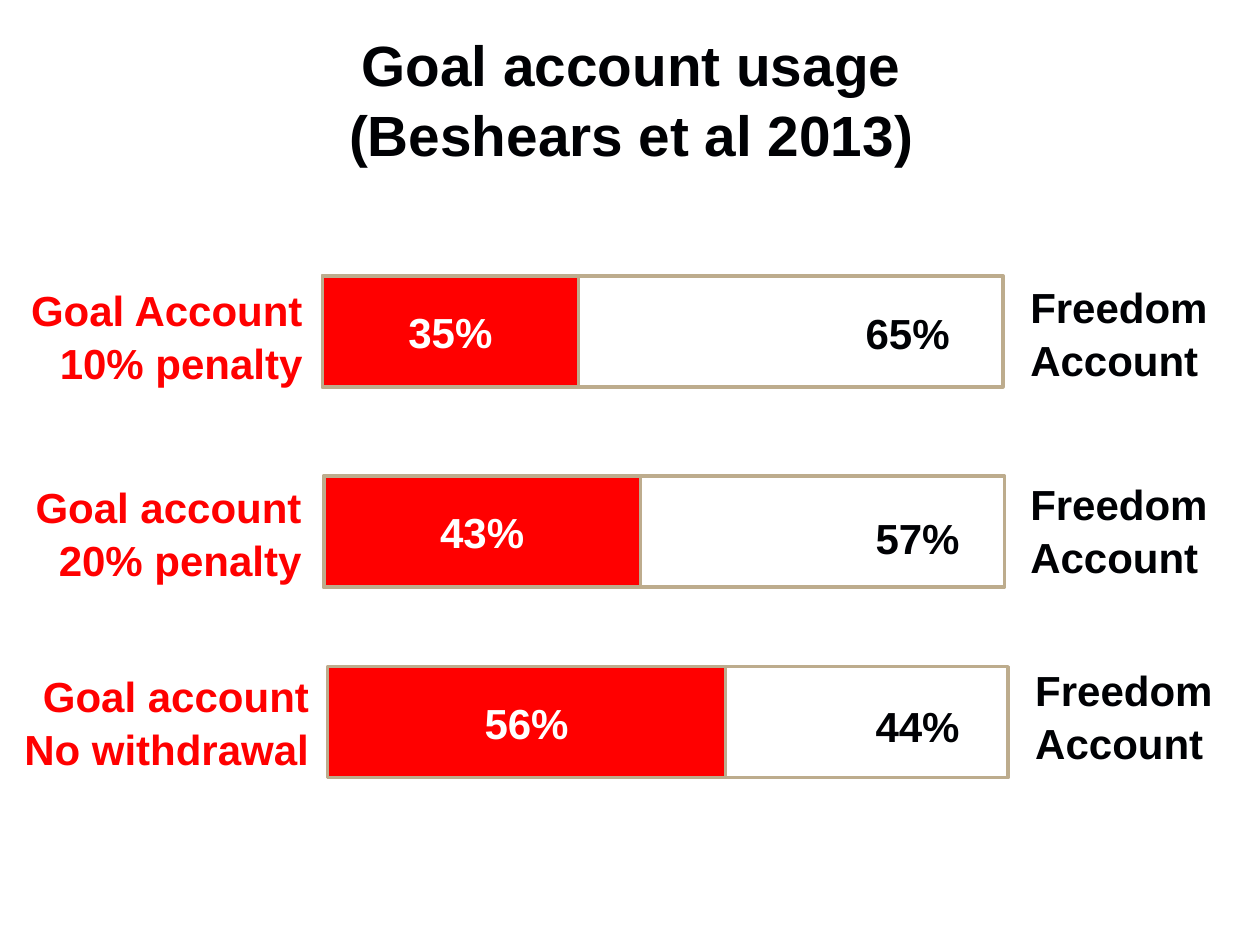
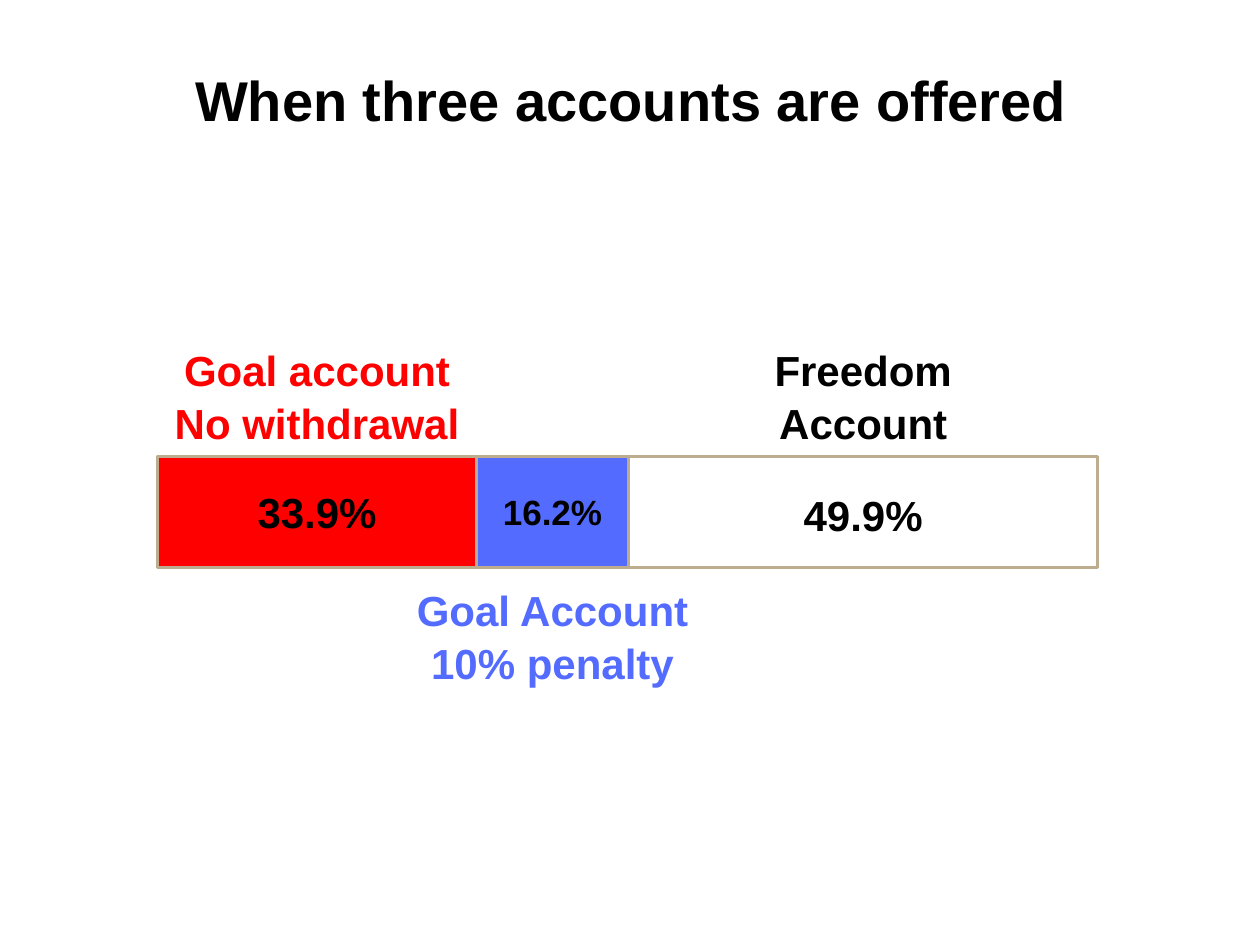
import pptx
import pptx.util
import pptx.dml.color
import pptx.enum.shapes
import pptx.enum.text
from dataclasses import dataclass

Cm = pptx.util.Cm
Pt = pptx.util.Pt
ALIGN = pptx.enum.text.PP_ALIGN
LEFT, CENTER, RIGHT = ALIGN.LEFT, ALIGN.CENTER, ALIGN.RIGHT


@dataclass(frozen=True)
class Theme:
    font: str = "Arial"
    ink: str = "000104"
    black: str = "000000"
    white: str = "FFFFFF"
    red: str = "FF0000"
    blue: str = "536BFF"
    border: str = "BDAC8D"
    border_width: float = 2
    label_size: float = 24
    small_size: float = 20
    label_spacing: float = 1.05
    title_spacing: float = 1.03


T = Theme()

# Content: lengths in centimetres
TITLE_BOX = (0.61, 0.38, 24.23, 3.18)
BAR_H, LABEL_H, VALUE_H = 2.24, 2.31, 1.27
FREEDOM = ["Freedom", "Account"]
FREEDOM_W = 4.11

USAGE_TITLE = ["Goal account usage", "(Beshears et al 2013)"]
USAGE_BAR_W = 13.72
USAGE = [
    dict(goal=["Goal Account", "10% penalty"], goal_box=(-0.53, 5.56, 6.88),
         bar=(6.5, 5.56), red_w=5.16, share="35%",
         rest="65%", rest_at=(17.2, 6.02), freedom_at=(20.52, 5.51)),
    dict(goal=["Goal account", "20% penalty"], goal_box=(0.41, 9.53, 5.92),
         bar=(6.53, 9.6), red_w=6.38, share="43%",
         rest="57%", rest_at=(17.4, 10.16), freedom_at=(20.52, 9.47)),
    dict(goal=["Goal account", "No withdrawal"], goal_box=(0.18, 13.34, 6.3),
         bar=(6.6, 13.44), red_w=8.03, share="56%",
         rest="44%", rest_at=(17.4, 13.94), freedom_at=(20.62, 13.23)),
]

OFFER_TITLE = ["When three accounts are offered"]
OFFER_BAR = (3.18, 9.2, 18.95)
ABOVE_Y, BELOW_Y, REST_Y = 6.78, 11.61, 9.7
# share, fill, text size, label, label width, label top
OFFER = [
    (33.9, T.red, T.label_size, ["Goal account", "No withdrawal"], 6.3, ABOVE_Y),
    (16.2, T.blue, T.small_size, ["Goal Account", "10% penalty"], 6.88, BELOW_Y),
]
OFFER_REST = 49.9


# Shared helpers
def rgb(value):
    return pptx.dml.color.RGBColor.from_string(value)


def add_run(p, text, color, size):
    r = p.add_run()
    r.text = text
    r.font.name, r.font.size, r.font.bold = T.font, Pt(size), True
    r.font.color.rgb = rgb(color)


def add_title(s, lines, color, size):
    sp = s.shapes.title
    sp.left, sp.top, sp.width, sp.height = map(Cm, TITLE_BOX)
    tf = sp.text_frame
    tf.auto_size = pptx.enum.text.MSO_AUTO_SIZE.NONE
    tf.vertical_anchor = pptx.enum.text.MSO_ANCHOR.MIDDLE
    p = tf.paragraphs[0]
    p.alignment, p.line_spacing = CENTER, T.title_spacing
    for i, line in enumerate(lines):
        if i:
            p.add_line_break()
        add_run(p, line, color, size)


def add_label(s, lines, x, y, w, h, color, align):
    tf = s.shapes.add_textbox(Cm(x), Cm(y), Cm(w), Cm(h)).text_frame
    tf.word_wrap = False
    for i, line in enumerate(lines):
        p = tf.add_paragraph() if i else tf.paragraphs[0]
        p.alignment, p.line_spacing = align, T.label_spacing
        add_run(p, line, color, T.label_size)


def add_bar(s, x, y, w, fill=None, text=None, color=None, size=T.label_size):
    sp = s.shapes.add_shape(pptx.enum.shapes.MSO_SHAPE.RECTANGLE,
                            Cm(x), Cm(y), Cm(w), Cm(BAR_H))
    sp.shadow.inherit = False
    sp.line.color.rgb, sp.line.width = rgb(T.border), Pt(T.border_width)
    if fill is None:
        sp.fill.background()
        return
    sp.fill.solid()
    sp.fill.fore_color.rgb = rgb(fill)
    tf = sp.text_frame
    tf.word_wrap = False
    tf.vertical_anchor = pptx.enum.text.MSO_ANCHOR.MIDDLE
    p = tf.paragraphs[0]
    p.alignment = CENTER
    add_run(p, text, color, size)


# Slide 1: one two-part bar per kind of goal account
def build_usage(s):
    add_title(s, USAGE_TITLE, T.ink, 32.4)
    for row in USAGE:
        add_bar(s, *row["bar"], USAGE_BAR_W)
        add_bar(s, *row["bar"], row["red_w"], T.red, row["share"], T.white)
        add_label(s, row["goal"], *row["goal_box"], LABEL_H, T.red, RIGHT)
        add_label(s, [row["rest"]], *row["rest_at"], 2.24, VALUE_H, T.ink, LEFT)
        add_label(s, FREEDOM, *row["freedom_at"], FREEDOM_W, LABEL_H, T.ink, LEFT)


# Slide 2: one bar split in proportion to the three shares
def build_offer(s):
    add_title(s, OFFER_TITLE, T.black, 32)
    x, y, total = OFFER_BAR
    add_bar(s, x, y, total)
    for share, fill, size, label, label_w, label_y in OFFER:
        w = total * share / 100
        add_bar(s, x, y, w, fill, f"{share}%", T.black, size)
        add_label(s, label, x + (w - label_w) / 2, label_y, label_w, LABEL_H,
                  fill, CENTER)
        x += w
    middle = x + total * OFFER_REST / 200
    for lines, top, w, h in ((FREEDOM, ABOVE_Y, FREEDOM_W, LABEL_H),
                             ([f"{OFFER_REST}%"], REST_Y, 2.95, VALUE_H)):
        add_label(s, lines, middle - w / 2, top, w, h, T.black, CENTER)


def main():
    prs = pptx.Presentation()
    prs.slide_width, prs.slide_height = Cm(25.4), Cm(19.05)
    for build in (build_usage, build_offer):
        build(prs.slides.add_slide(prs.slide_layouts[5]))
    prs.save("out.pptx")


if __name__ == "__main__":
    main()
